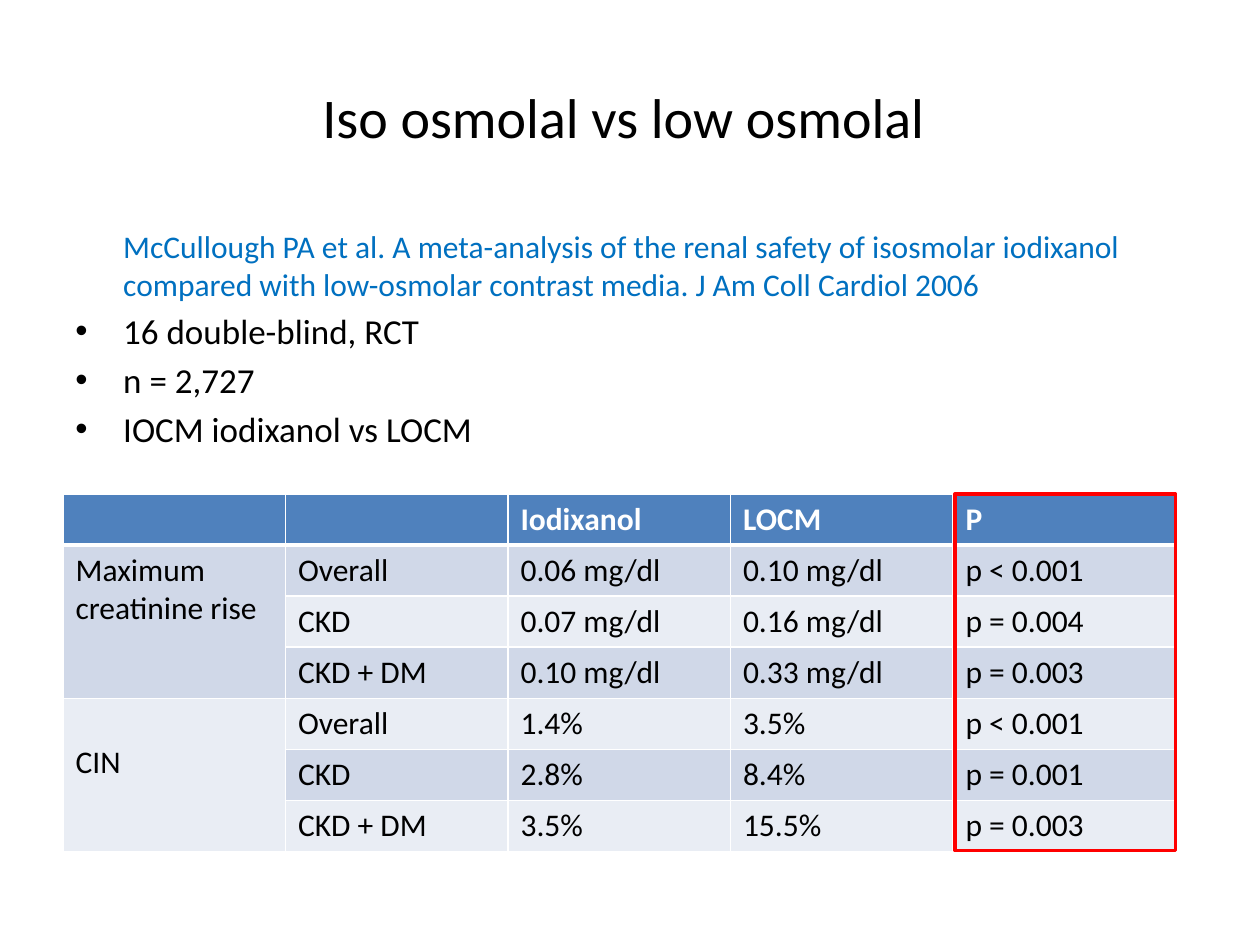
"""Build a slide comparing iso-osmolal and low-osmolal contrast media."""
from lxml.etree import SubElement
from pptx import Presentation
from pptx.dml.color import RGBColor
from pptx.enum.shapes import MSO_SHAPE
from pptx.enum.text import MSO_ANCHOR, PP_ALIGN
from pptx.oxml import parse_xml
from pptx.oxml.ns import nsdecls, qn
from pptx.util import Inches, Pt

COLORS = {
    "text": "000000",
    "citation": "0070C0",
    "header": "4F81BD",
    "band_dark": "D0D8E8",
    "band_light": "E9EDF4",
    "white": "FFFFFF",
    "highlight": "FF0000",
}
CITATION = (
    "McCullough PA et al. A meta-analysis of the renal safety of isosmolar iodixanol "
    "compared with low-osmolar contrast media. J Am Coll Cardiol 2006"
)
FINDINGS = ["16 double-blind, RCT", "n = 2,727", "IOCM iodixanol vs LOCM"]
ROWS = [
    ["", "", "Iodixanol", "LOCM", "P"],
    ["Maximum creatinine rise", "Overall", "0.06 mg/dl", "0.10 mg/dl", "p < 0.001"],
    ["", "CKD", "0.07 mg/dl", "0.16 mg/dl", "p = 0.004"],
    ["", "CKD + DM", "0.10 mg/dl", "0.33 mg/dl", "p = 0.003"],
    ["CIN", "Overall", "1.4%", "3.5%", "p < 0.001"],
    ["", "CKD", "2.8%", "8.4%", "p = 0.001"],
    ["", "CKD + DM", "3.5%", "15.5%", "p = 0.003"],
]


def color(name):
    return RGBColor.from_string(COLORS[name])


def write(para, text, size=18, fill="text", bold=False, align=PP_ALIGN.LEFT, font="Calibri"):
    para.alignment = align
    span = para.add_run()
    span.text = text
    span.font.name = font
    span.font.size = Pt(size)
    span.font.bold = bold
    span.font.color.rgb = color(fill)


class SlideBuilder:
    def __init__(self, deck):
        self.page = deck.slides.add_slide(deck.slide_layouts[5])
        self.hanging = Inches(0.38)

    def title(self, text, left, top, width, height):
        box = self.page.shapes.title
        box.left, box.top, box.width, box.height = map(Inches, (left, top, width, height))
        box.text_frame.vertical_anchor = MSO_ANCHOR.MIDDLE
        write(box.text_frame.paragraphs[0], text, size=32, align=PP_ALIGN.CENTER)

    def body(self, citation, findings, left, top, width, height):
        box = self.page.shapes.add_textbox(*map(Inches, (left, top, width, height)))
        frame = box.text_frame
        frame.word_wrap = True
        self.paragraph(frame.paragraphs[0], citation, size=18, fill="citation")
        for finding in findings:
            self.paragraph(frame.add_paragraph(), finding, bullet="•", size=20)

    def paragraph(self, para, text, bullet=None, size=18, fill="text"):
        write(para, text, size=size, fill=fill)
        para.space_before = Pt(size * 0.2)
        properties = para._p.get_or_add_pPr()
        properties.set("marL", str(self.hanging))
        properties.set("indent", str(-self.hanging if bullet else 0))
        if bullet:
            SubElement(properties, qn("a:buFont"), typeface="Arial")
            SubElement(properties, qn("a:buChar"), char=bullet)

    def borders(self, cell, top=1, bottom=1):
        widths = {"lnL": 1, "lnR": 1, "lnT": top, "lnB": bottom}
        for position, (side, width) in enumerate(widths.items()):
            line = parse_xml(
                f'<a:{side} {nsdecls("a")} w="{Pt(width)}"><a:solidFill>'
                f'<a:srgbClr val="{COLORS["white"]}"/></a:solidFill></a:{side}>'
            )
            cell._tc.get_or_add_tcPr().insert(position, line)

    def table(self, rows, left, top, width, height):
        frame = self.page.shapes.add_table(
            len(rows), len(rows[0]), *map(Inches, (left, top, width, height))
        )
        table = frame.table
        for row, values in enumerate(rows):
            header = row == 0
            band = "header" if header else "band_dark" if row % 2 else "band_light"
            for column, value in enumerate(values):
                cell = table.cell(row, column)
                cell.fill.solid()
                cell.fill.fore_color.rgb = color(band)
                self.borders(cell, top=3 if row == 1 else 1, bottom=3 if header else 1)
                if value:
                    write(cell.text_frame.paragraphs[0], value,
                          fill="white" if header else "text", bold=header)
        for first in (1, 4):
            table.cell(first, 0).merge(table.cell(first + 2, 0))
        table.cell(4, 0).margin_top = Inches(0.36)

    def outline(self, left, top, width, height):
        box = self.page.shapes.add_shape(
            MSO_SHAPE.RECTANGLE, *map(Inches, (left, top, width, height))
        )
        box.shadow.inherit = False
        box.fill.background()
        box.line.color.rgb = color("highlight")
        box.line.width = Pt(2)


def main():
    deck = Presentation()
    deck.slide_width, deck.slide_height = Inches(10), Inches(7.5)
    slide = SlideBuilder(deck)
    slide.title("Iso osmolal vs low osmolal ", 0.5, 0.3, 9, 1.25)
    slide.body(CITATION, FINDINGS, 0.5, 1.75, 9, 5.25)
    slide.table(ROWS, 0.5, 3.92, 8.83, 2.84)
    slide.outline(7.58, 3.92, 1.75, 2.83)
    deck.save("out.pptx")


if __name__ == "__main__":
    main()
